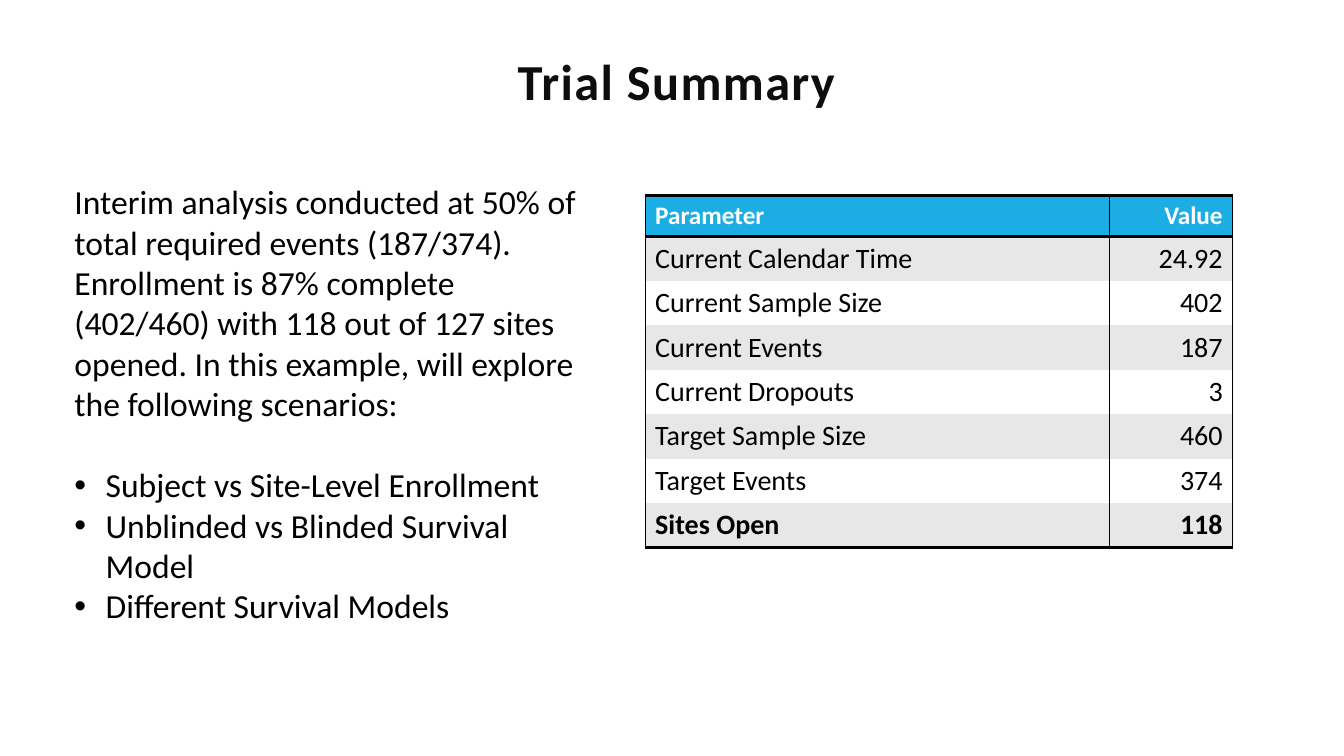
from dataclasses import dataclass

from lxml.etree import SubElement
from pptx import Presentation
from pptx.dml.color import RGBColor
from pptx.enum.text import MSO_ANCHOR, MSO_AUTO_SIZE, PP_ALIGN
from pptx.oxml.ns import qn
from pptx.slide import Slide
from pptx.table import _Cell
from pptx.text.text import _Paragraph, _Run
from pptx.util import Inches, Pt

SLIDE_WIDTH, SLIDE_HEIGHT = Inches(13.33), Inches(7.5)
GRID_COLUMNS, GRID_ROWS = 40, 24
FONT = "Calibri"
BLACK = RGBColor(0x00, 0x00, 0x00)
WHITE = RGBColor(0xFF, 0xFF, 0xFF)
TITLE_INK = RGBColor(0x0D, 0x0D, 0x0D)
HEADER_BLUE = RGBColor(0x1C, 0xAD, 0xE4)
BAND_GRAY = RGBColor(0xE7, 0xE7, 0xE7)

INTRODUCTION = (
    "Interim analysis conducted at 50% of total required events (187/374). "
    "Enrollment is 87% complete (402/460) with 118 out of 127 sites opened. "
    "In this example, will explore the following scenarios:"
)
SCENARIOS = (
    "Subject vs Site-Level Enrollment",
    "Unblinded vs Blinded Survival Model",
    "Different Survival Models",
)


@dataclass(frozen=True)
class Area:
    column: float
    row: float
    columns: float
    rows: float

    def lengths(self) -> tuple[int, int, int, int]:
        return (across(self.column), down(self.row), across(self.columns), down(self.rows))


@dataclass(frozen=True)
class Parameter:
    label: str
    value: str
    bold: bool = False


PARAMETERS = (
    Parameter("Current Calendar Time", "24.92"),
    Parameter("Current Sample Size", "402"),
    Parameter("Current Events", "187"),
    Parameter("Current Dropouts", "3"),
    Parameter("Target Sample Size", "460"),
    Parameter("Target Events", "374"),
    Parameter("Sites Open", "118", True),
)
HEADER = Parameter("Parameter", "Value", True)

TITLE_AREA = Area(5.16, 0.45, 29.95, 4.54)
SUMMARY_AREA = Area(1.92, 5.6, 16.08, 14.53)
LABEL_COLUMNS, VALUE_COLUMNS = 13.83, 3.66
HEADER_ROWS, PARAMETER_ROWS = 1.3, 1.41
TABLE_AREA = Area(19.2, 6.21, LABEL_COLUMNS + VALUE_COLUMNS,
                  HEADER_ROWS + PARAMETER_ROWS * len(PARAMETERS))


def across(columns: float) -> int:
    return round(SLIDE_WIDTH * columns / GRID_COLUMNS)


def down(rows: float) -> int:
    return round(SLIDE_HEIGHT * rows / GRID_ROWS)


def add_run(paragraph: _Paragraph, words: str, size: float, color: RGBColor,
            bold: bool = False) -> _Run:
    run = paragraph.add_run()
    run.text = words
    run.font.name = FONT
    run.font.size = Pt(size)
    run.font.bold = bold
    run.font.color.rgb = color
    return run


def add_title(slide: Slide) -> None:
    title = slide.shapes.title
    title.left, title.top, title.width, title.height = TITLE_AREA.lengths()
    title.text_frame.vertical_anchor = MSO_ANCHOR.MIDDLE
    title.text_frame.word_wrap = True
    heading = title.text_frame.paragraphs[0]
    heading.alignment = PP_ALIGN.CENTER
    heading.line_spacing = 0.8
    run = add_run(heading, "Trial Summary", 36, TITLE_INK, True)
    run.font._element.set("spc", "100")


def add_bullet(paragraph: _Paragraph) -> None:
    properties = paragraph._p.get_or_add_pPr()
    properties.set("marL", str(Inches(0.31)))
    properties.set("indent", str(-Inches(0.31)))
    SubElement(properties, qn("a:buFont")).set("typeface", "Arial")
    SubElement(properties, qn("a:buChar")).set("char", "•")


def add_summary(slide: Slide) -> None:
    summary = slide.shapes.add_textbox(*SUMMARY_AREA.lengths()).text_frame
    summary.word_wrap = True
    summary.auto_size = MSO_AUTO_SIZE.SHAPE_TO_FIT_TEXT
    add_run(summary.paragraphs[0], INTRODUCTION, 24, BLACK)
    for position, scenario in enumerate(SCENARIOS):
        bullet = summary.add_paragraph()
        add_bullet(bullet)
        if position == 0:
            bullet.space_before = Pt(29.3)
        add_run(bullet, scenario, 24, BLACK)


def set_borders(cell: _Cell, top: float, bottom: float) -> None:
    properties = cell._tc.get_or_add_tcPr()
    for side, points in (("L", 1), ("R", 1), ("T", top), ("B", bottom)):
        line = SubElement(properties, qn(f"a:ln{side}"))
        if points:
            line.set("w", str(Pt(points)))
            color = SubElement(SubElement(line, qn("a:solidFill")), qn("a:srgbClr"))
            color.set("val", str(BLACK))
        else:
            SubElement(line, qn("a:noFill"))


def add_parameter_table(slide: Slide) -> None:
    entries = (HEADER, *PARAMETERS)
    table = slide.shapes.add_table(len(entries), 2, *TABLE_AREA.lengths()).table
    table.horz_banding = False
    for column, columns in zip(table.columns, (LABEL_COLUMNS, VALUE_COLUMNS)):
        column.width = across(columns)
    for index, entry in enumerate(entries):
        is_header = index == 0
        table.rows[index].height = down(HEADER_ROWS if is_header else PARAMETER_ROWS)
        fill = HEADER_BLUE if is_header else (BAND_GRAY if index % 2 else WHITE)
        top = 2 if index <= 1 else 0
        bottom = 2 if index in (0, len(entries) - 1) else 0
        for cell, words, alignment in zip(
            table.rows[index].cells, (entry.label, entry.value), (PP_ALIGN.LEFT, PP_ALIGN.RIGHT)
        ):
            set_borders(cell, top, bottom)
            cell.fill.solid()
            cell.fill.fore_color.rgb = fill
            paragraph = cell.text_frame.paragraphs[0]
            paragraph.alignment = alignment
            add_run(paragraph, words, 18 if is_header else 20,
                    WHITE if is_header else BLACK, entry.bold)


def main() -> None:
    presentation = Presentation()
    presentation.slide_width, presentation.slide_height = SLIDE_WIDTH, SLIDE_HEIGHT
    slide = presentation.slides.add_slide(presentation.slide_layouts.get_by_name("Title Only"))
    add_parameter_table(slide)
    add_title(slide)
    add_summary(slide)
    presentation.save("out.pptx")


if __name__ == "__main__":
    main()
